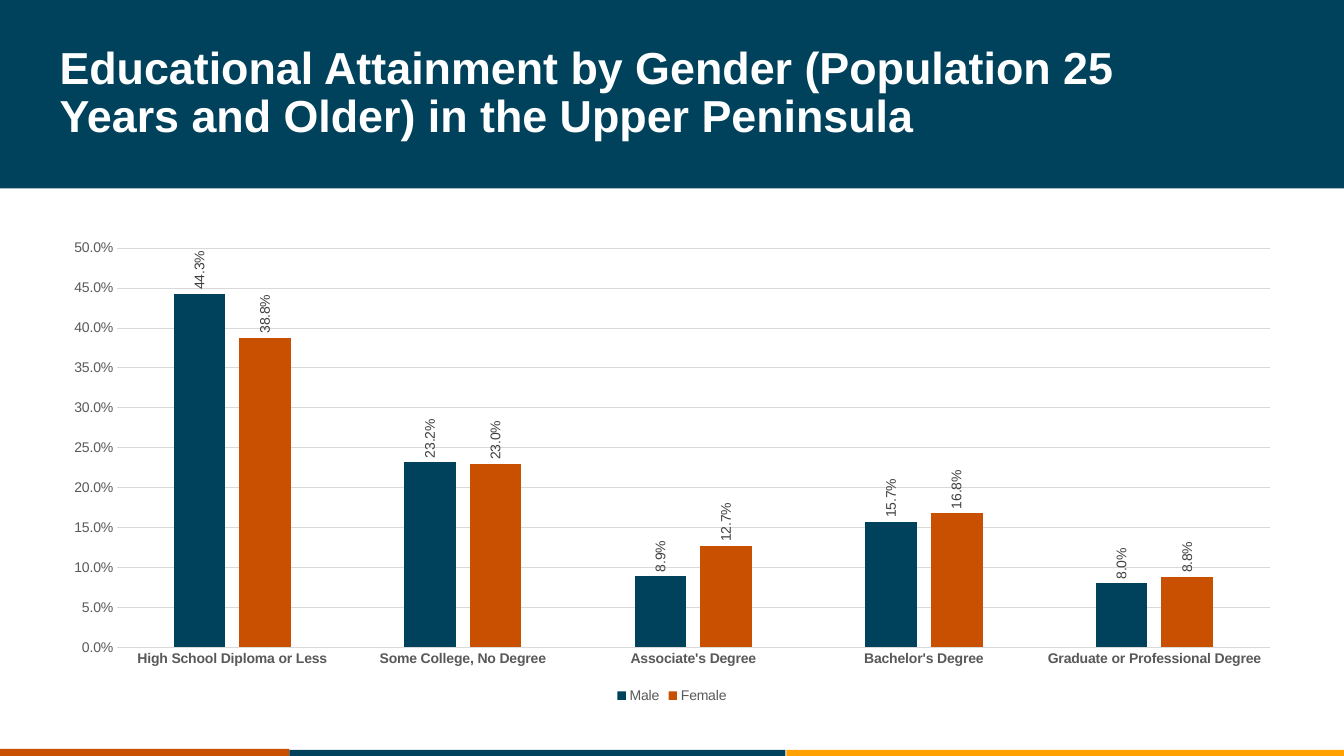
from pptx import Presentation
from pptx.chart.data import CategoryChartData
from pptx.dml.color import RGBColor
from pptx.enum.chart import XL_CHART_TYPE, XL_LABEL_POSITION, XL_LEGEND_POSITION, XL_TICK_MARK
from pptx.enum.shapes import MSO_SHAPE
from pptx.enum.text import MSO_ANCHOR, MSO_AUTO_SIZE, PP_ALIGN
from pptx.util import Inches, Pt

RECT = MSO_SHAPE.RECTANGLE
COLUMN = XL_CHART_TYPE.COLUMN_CLUSTERED
OUTSIDE = XL_LABEL_POSITION.OUTSIDE_END
BOTTOM = XL_LEGEND_POSITION.BOTTOM
NO_TICK = XL_TICK_MARK.NONE
MIDDLE = MSO_ANCHOR.MIDDLE
NO_FIT = MSO_AUTO_SIZE.NONE
LEFT = PP_ALIGN.LEFT

NAVY, RUST, GOLD = "00425C", "C95001", "FFA100"
WHITE, GRID, GREY, DARK = "FFFFFF", "D9D9D9", "595959", "404040"
PERCENT = "0.0%"

TITLE = "Educational Attainment by Gender (Population 25 Years and Older) in the Upper Peninsula"
BANDS = [
    (NAVY, (-0.01, -0.01, 13.35, 1.88)),
    (RUST, (-0.01, 7.43, 2.88, 0.13)),
    (NAVY, (2.87, 7.44, 4.92, 0.13)),
    (GOLD, (7.8, 7.44, 5.55, 0.13)),
]
LEVELS = [
    "High School Diploma or Less",
    "Some College, No Degree",
    "Associate's Degree",
    "Bachelor's Degree",
    "Graduate or Professional Degree",
]
GENDERS = [
    ("Male", NAVY, (0.443, 0.232, 0.089, 0.157, 0.08)),
    ("Female", RUST, (0.388, 0.23, 0.127, 0.168, 0.088)),
]


def color(code):
    return RGBColor.from_string(code)


def assign(item, values):
    for name, value in values.items():
        setattr(item, name, value)


def style(font, code, size=10, bold=False):
    assign(font, {"name": "Arial", "size": Pt(size), "bold": bold})
    font.color.rgb = color(code)


def stroke(line):
    line.color.rgb = color(GRID)
    line.width = Pt(0.75)


def add_band(slide, code, box):
    band = slide.shapes.add_shape(RECT, *map(Inches, box))
    band.shadow.inherit = False
    band.fill.solid()
    band.fill.fore_color.rgb = color(code)
    band.line.fill.background()


def set_title(slide):
    title = slide.shapes.title
    slide.shapes.element.append(title.element)
    assign(title, {"left": Inches(0.49), "top": Inches(0.32),
                   "width": Inches(11.11), "height": Inches(1.22)})
    frame = title.text_frame
    frame.text = TITLE
    assign(frame, {"vertical_anchor": MIDDLE, "word_wrap": True, "auto_size": NO_FIT})
    para = frame.paragraphs[0]
    assign(para, {"alignment": LEFT, "line_spacing": 0.9})
    style(para.runs[0].font, WHITE, 32, True)


def set_axes(chart):
    levels, scale = chart.category_axis, chart.value_axis
    for axis, bold in ((levels, True), (scale, False)):
        assign(axis, {"major_tick_mark": NO_TICK, "minor_tick_mark": NO_TICK})
        style(axis.tick_labels.font, GREY, bold=bold)
    stroke(levels.format.line)
    scale.format.line.fill.background()
    assign(scale, {"minimum_scale": 0, "maximum_scale": 0.5, "major_unit": 0.05})
    assign(scale.tick_labels, {"number_format": PERCENT, "number_format_is_linked": False})
    stroke(scale.major_gridlines.format.line)


def set_series(chart):
    plot = chart.plots[0]
    assign(plot, {"gap_width": 219, "overlap": -27, "vary_by_categories": False})
    for series, (_, code, _) in zip(plot.series, GENDERS):
        series.invert_if_negative = False
        series.format.fill.solid()
        series.format.fill.fore_color.rgb = color(code)
        labels = series.data_labels
        assign(labels, {"show_value": True, "position": OUTSIDE,
                        "number_format": PERCENT, "number_format_is_linked": False})
        style(labels.font, DARK)
    for body in chart.element.xpath(".//c:dLbls/c:txPr/a:bodyPr"):
        body.set("rot", "-5400000")
        body.set("vert", "horz")


def add_chart(slide):
    data = CategoryChartData(number_format=PERCENT)
    data.categories = LEVELS
    for name, _, values in GENDERS:
        data.add_series(name, values)
    box = map(Inches, (0.49, 2.29, 12.35, 4.73))
    chart = slide.shapes.add_chart(COLUMN, *box, data).chart
    assign(chart, {"has_title": False, "has_legend": True})
    assign(chart.font, {"name": "Calibri", "size": Pt(10)})
    assign(chart.legend, {"position": BOTTOM, "include_in_layout": False})
    style(chart.legend.font, GREY)
    set_axes(chart)
    set_series(chart)


def main():
    deck = Presentation()
    assign(deck, {"slide_width": Inches(13.33), "slide_height": Inches(7.5)})
    slide = deck.slides.add_slide(deck.slide_layouts[5])
    for code, box in BANDS:
        add_band(slide, code, box)
    add_chart(slide)
    set_title(slide)
    deck.save("out.pptx")


if __name__ == "__main__":
    main()
